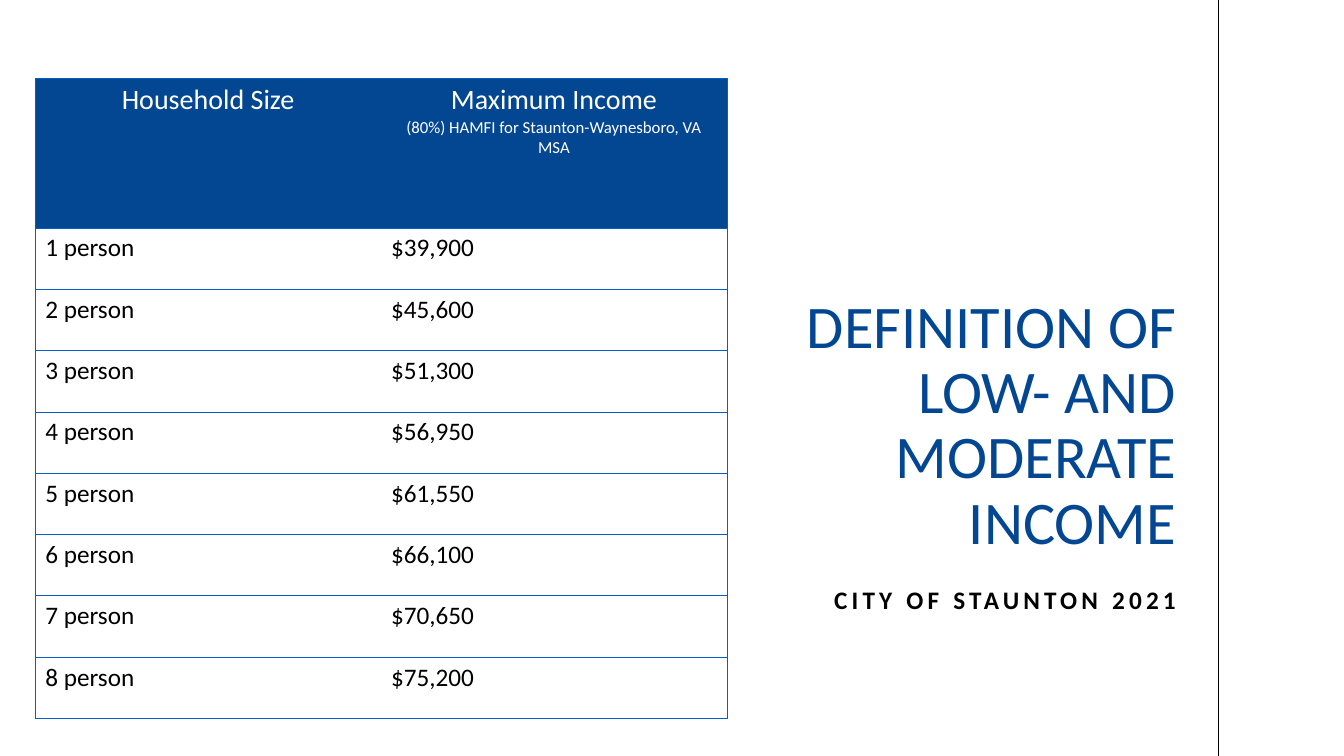
from dataclasses import dataclass

from lxml.etree import SubElement
from pptx import Presentation
from pptx.dml.color import RGBColor
from pptx.enum.shapes import MSO_CONNECTOR
from pptx.enum.text import MSO_ANCHOR, MSO_AUTO_SIZE, PP_ALIGN
from pptx.oxml import parse_xml
from pptx.oxml.ns import nsdecls, qn
from pptx.util import Pt

NAVY = RGBColor(0x03, 0x47, 0x93)
BORDER_BLUE = RGBColor(0x04, 0x5F, 0xC4)
WHITE = RGBColor(0xFF, 0xFF, 0xFF)
BLACK = RGBColor(0x00, 0x00, 0x00)
FONT = "Calibri"
COLUMN_WIDTH = 247
HEADER_HEIGHT = 107
ROW_HEIGHT = 43.8


@dataclass(frozen=True)
class Heading:
    text: str
    top: float
    height: float
    size: float
    color: RGBColor
    bold: bool
    anchor: MSO_ANCHOR
    space_before: float
    letter_spacing: int


@dataclass(frozen=True)
class IncomeLimit:
    household: str
    maximum: str


TITLE = Heading("DEFINITION OF LOW- AND MODERATE INCOME", 213.8, 187.9, 43.2,
                NAVY, False, MSO_ANCHOR.BOTTOM, 0, 0)
SUBTITLE = Heading("CITY OF STAUNTON 2021", 416.2, 28.1, 18,
                   BLACK, True, MSO_ANCHOR.TOP, 10, 300)
MAXIMA = ["$39,900", "$45,600", "$51,300", "$56,950",
          "$61,550", "$66,100", "$70,650", "$75,200"]
LIMITS = [IncomeLimit(f"{size} person", maximum)
          for size, maximum in enumerate(MAXIMA, start=1)]


def format_paragraph(paragraph, size: float, color: RGBColor,
                     alignment: PP_ALIGN, bold: bool = False) -> None:
    paragraph.alignment = alignment
    for run in paragraph.runs:
        run.font.name = FONT
        run.font.size = Pt(size)
        run.font.bold = bold
        run.font.color.rgb = color


def place_heading(placeholder, heading: Heading) -> None:
    placeholder.left, placeholder.top = Pt(511.2), Pt(heading.top)
    placeholder.width, placeholder.height = Pt(329), Pt(heading.height)
    text_frame = placeholder.text_frame
    text_frame.text = heading.text
    text_frame.word_wrap = True
    text_frame.auto_size = MSO_AUTO_SIZE.NONE
    text_frame.vertical_anchor = heading.anchor
    text_frame.margin_left = text_frame.margin_right = Pt(0)
    text_frame.margin_top = text_frame.margin_bottom = Pt(3.6)
    paragraph = text_frame.paragraphs[0]
    paragraph.line_spacing = 0.9
    paragraph.space_before = Pt(heading.space_before)
    format_paragraph(paragraph, heading.size, heading.color, PP_ALIGN.RIGHT, heading.bold)
    if heading.letter_spacing:
        paragraph.runs[0].font._element.set("spc", str(heading.letter_spacing))


def set_borders(cell, column: int) -> None:
    properties = cell._tc.get_or_add_tcPr()
    visible = {"lnL": column == 0, "lnR": column == 1, "lnT": True, "lnB": True}
    for position, (side, shown) in enumerate(visible.items()):
        paint = (f'<a:solidFill><a:srgbClr val="{BORDER_BLUE}"/></a:solidFill>'
                 if shown else "<a:noFill/>")
        border = parse_xml(f'<a:{side} {nsdecls("a")} w="{Pt(0.5)}">{paint}</a:{side}>')
        properties.insert(position, border)


def add_income_table(slide) -> None:
    row_count = len(LIMITS) + 1
    frame = slide.shapes.add_table(
        row_count, 2, Pt(25.2), Pt(55.8), Pt(2 * COLUMN_WIDTH),
        Pt(HEADER_HEIGHT + ROW_HEIGHT * len(LIMITS)))
    table = frame.table
    table.horz_banding = False
    for column in table.columns:
        column.width = Pt(COLUMN_WIDTH)
    for index, row in enumerate(table.rows):
        row.height = Pt(ROW_HEIGHT if index else HEADER_HEIGHT)

    contents = [("Household Size",
                 "Maximum Income\n(80%) HAMFI for Staunton-Waynesboro, VA MSA")]
    contents += [(limit.household, limit.maximum) for limit in LIMITS]
    for row_index, texts in enumerate(contents):
        for column_index, text in enumerate(texts):
            cell = table.cell(row_index, column_index)
            cell.text_frame.text = text
            if row_index == 0:
                cell.fill.solid()
                cell.fill.fore_color.rgb = NAVY
                for paragraph, size in zip(cell.text_frame.paragraphs, (20, 12)):
                    format_paragraph(paragraph, size, WHITE, PP_ALIGN.CENTER)
            else:
                cell.fill.background()
                format_paragraph(cell.text_frame.paragraphs[0], 18, BLACK, PP_ALIGN.LEFT)
            set_borders(cell, column_index)


def add_side_rule(slide) -> None:
    rule = slide.shapes.add_connector(
        MSO_CONNECTOR.STRAIGHT, Pt(870.5), Pt(0), Pt(870.5), Pt(540))
    rule.line.color.rgb = BLACK
    rule.line.width = Pt(1)
    SubElement(rule._element.spPr, qn("a:effectLst"))


def main() -> None:
    presentation = Presentation()
    presentation.slide_width, presentation.slide_height = Pt(960), Pt(540)
    slide = presentation.slides.add_slide(presentation.slide_layouts[0])
    add_side_rule(slide)
    place_heading(slide.placeholders[1], SUBTITLE)
    place_heading(slide.shapes.title, TITLE)
    add_income_table(slide)
    presentation.save("out.pptx")


if __name__ == "__main__":
    main()
